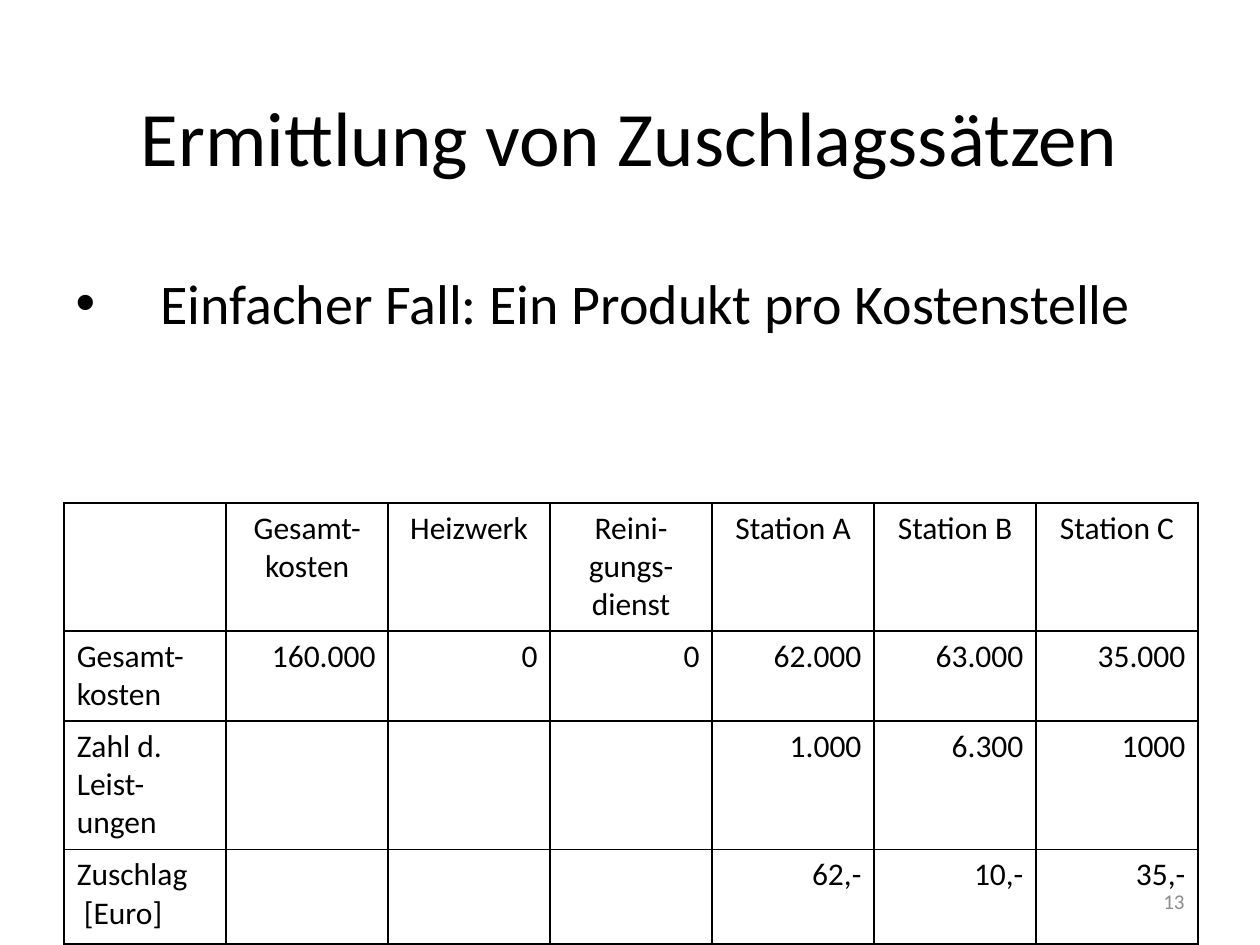
from pptx import Presentation
from pptx.dml.color import RGBColor
from pptx.enum.text import MSO_ANCHOR, PP_ALIGN
from pptx.oxml import parse_xml
from pptx.oxml.ns import nsdecls
from pptx.util import Inches, Pt

CENTER, RIGHT, JUSTIFY, LEFT = PP_ALIGN.CENTER, PP_ALIGN.RIGHT, PP_ALIGN.JUSTIFY, PP_ALIGN.LEFT
MIDDLE, TOP = MSO_ANCHOR.MIDDLE, MSO_ANCHOR.TOP

BLACK = RGBColor(0x00, 0x00, 0x00)
WHITE = RGBColor(0xFF, 0xFF, 0xFF)
GRAY = RGBColor(0x8C, 0x8C, 0x8C)
FONT = "Calibri"

COST_ROWS = [
    ["", "Gesamt-\nkosten", "Heizwerk", "Reini-\ngungs-\ndienst",
     "Station A", "Station B", "Station C"],
    ["Gesamt-\nkosten", "160.000", "0", "0", "62.000", "63.000", "35.000"],
    ["Zahl d.\nLeist-\nungen", "", "", "", "1.000", "6.300", "1000"],
    ["Zuschlag\n [Euro]", "", "", "", "62,-", "10,-", "35,-"],
]
ROW_HEIGHTS = [1.02, 0.71, 1.02, 0.75]
TABLE_WIDTH = 9


def place(shape, left, top, width, height):
    box = {"left": left, "top": top, "width": width, "height": height}
    for side, inches in box.items():
        setattr(shape, side, Inches(inches))


def write(frame, text, size, align, color=BLACK):
    """Fill a text frame, one paragraph per line of text."""
    frame.text = text
    for paragraph in frame.paragraphs:
        paragraph.alignment = align
        paragraph.font.color.rgb = color
        for run in paragraph.runs:
            for name, value in {"name": FONT, "size": Pt(size)}.items():
                setattr(run.font, name, value)
            run.font.color.rgb = color


def format_frame(frame, anchor):
    for name, value in {"word_wrap": True, "vertical_anchor": anchor}.items():
        setattr(frame, name, value)


def set_hanging_indent(paragraph, inches):
    properties = paragraph._p.get_or_add_pPr()
    properties.set("marL", str(Inches(inches)))
    properties.set("indent", str(-Inches(inches)))


def add_borders(cell):
    properties = cell._tc.get_or_add_tcPr()
    for position, side in enumerate(("lnL", "lnR", "lnT", "lnB")):
        properties.insert(position, parse_xml(
            f'<a:{side} {nsdecls("a")} w="{Pt(1)}"><a:solidFill>'
            f'<a:srgbClr val="{BLACK}"/></a:solidFill></a:{side}>'))


def cell_alignment(row, column):
    if row == 0:
        return CENTER
    return JUSTIFY if column == 0 else RIGHT


def add_cost_table(slide):
    table = slide.shapes.add_table(
        len(COST_ROWS), len(COST_ROWS[0]), Inches(0.51), Inches(3.99),
        Inches(TABLE_WIDTH), Inches(sum(ROW_HEIGHTS))).table
    table.first_row = table.horz_banding = False
    for row, height in zip(table.rows, ROW_HEIGHTS):
        row.height = Inches(height)
    for r, texts in enumerate(COST_ROWS):
        for c, text in enumerate(texts):
            cell = table.cell(r, c)
            write(cell.text_frame, text, 18, cell_alignment(r, c))
            cell.fill.solid()
            cell.fill.fore_color.rgb = WHITE
            add_borders(cell)


def add_page_number(slide, number):
    box = slide.shapes.add_textbox(0, 0, 0, 0)
    place(box, 7.17, 6.95, 2.33, 0.4)
    format_frame(box.text_frame, MIDDLE)
    write(box.text_frame, number, 12, RIGHT, GRAY)


def main():
    presentation = Presentation()
    presentation.slide_width, presentation.slide_height = Inches(10), Inches(7.5)
    slide = presentation.slides.add_slide(presentation.slide_layouts[1])

    # Title
    title = slide.shapes.title
    place(title, 0.5, 0.32, 9, 1.51)
    format_frame(title.text_frame, MIDDLE)
    write(title.text_frame, "Ermittlung von Zuschlagssätzen", 44, CENTER)

    # Bullet list
    body = slide.placeholders[1]
    place(body, 0.5, 2.08, 9, 5.29)
    format_frame(body.text_frame, TOP)
    write(body.text_frame, "Einfacher Fall: Ein Produkt pro Kostenstelle", 32, LEFT)
    set_hanging_indent(body.text_frame.paragraphs[0], 0.67)

    # Cost table and page number
    add_cost_table(slide)
    add_page_number(slide, "13")

    presentation.save("out.pptx")


if __name__ == "__main__":
    main()
